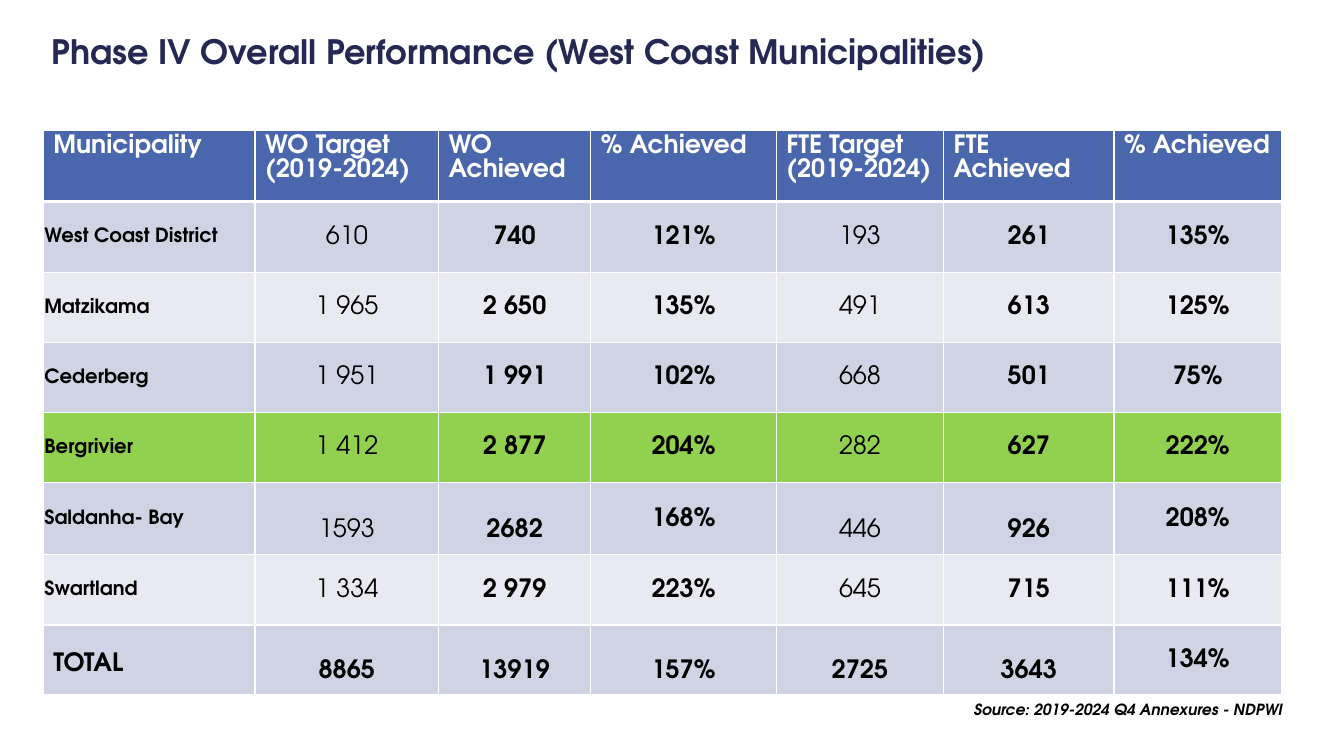
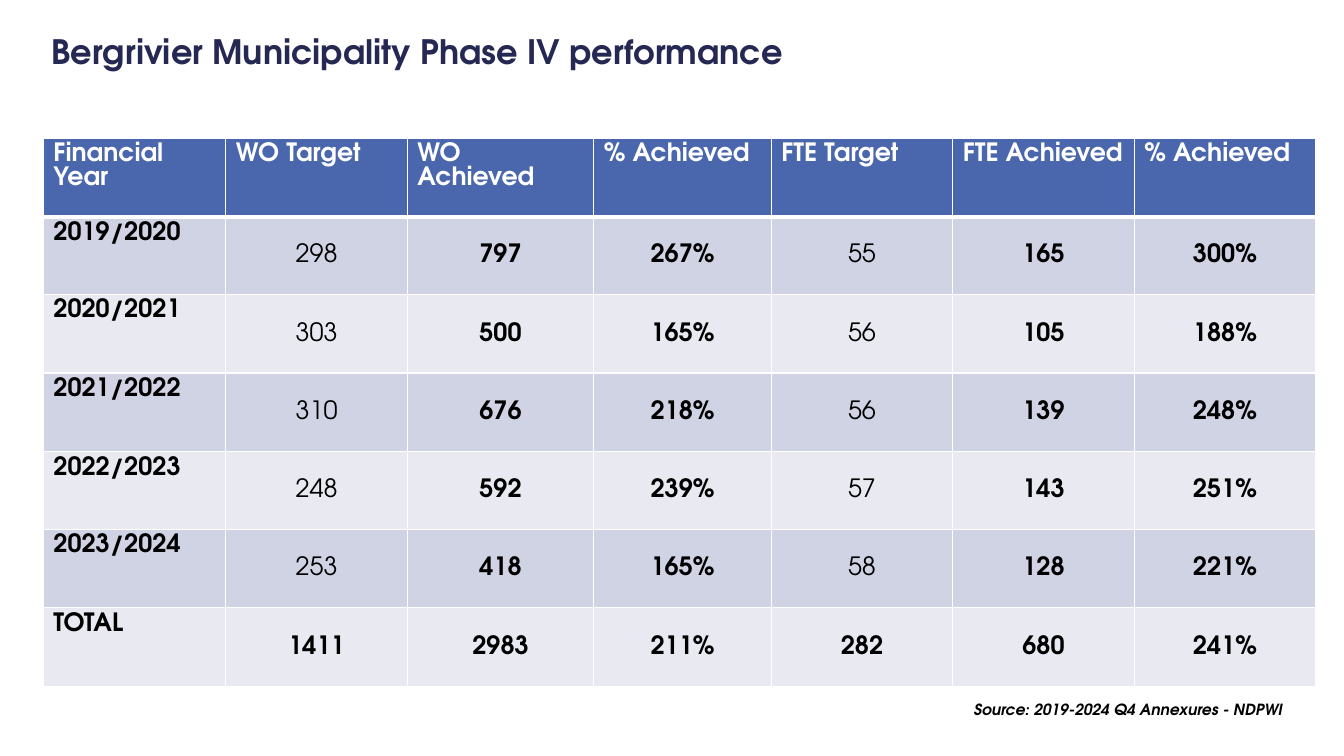
"""Build two municipal performance slides, each with a title, a table and a source line."""
from dataclasses import dataclass

from lxml import etree
from pptx import Presentation
from pptx.dml.color import RGBColor
from pptx.enum.text import MSO_ANCHOR, MSO_AUTO_SIZE, PP_ALIGN
from pptx.oxml.ns import qn
from pptx.util import Emu, Pt

LEFT, CENTER = PP_ALIGN.LEFT, PP_ALIGN.CENTER
TOP, MIDDLE = MSO_ANCHOR.TOP, MSO_ANCHOR.MIDDLE
NO_FIT = MSO_AUTO_SIZE.NONE

EMU_PER_PX = 9144
FONT = "TeX Gyre Adventor"
COLORS = {
    "title": "242852",
    "header": "4A66AC",
    "dark": "D0D3E3",
    "light": "E9EAF1",
    "highlight": "92D050",
    "white": "FFFFFF",
    "black": "000000",
}
TARGET_COLUMNS = (1, 4)
TABLE_LEFT = 43
SOURCE = "Source: 2019-2024 Q4 Annexures - NDPWI"
TIGHT = (1, 1, 1, 0)
NORMAL = (10, 5, 10, 5)
LOWERED = (10, 28, 10, 5)


@dataclass(frozen=True)
class Row:
    """A body row, its fill and the columns whose text sits lower."""

    texts: tuple[str, ...]
    fill: str
    lowered: tuple[int, ...] = ()


@dataclass(frozen=True)
class Performance:
    """The content and grid of one slide."""

    title: str
    top: int
    widths: tuple[int, ...]
    heights: tuple[int, ...]
    header: tuple[str, ...]
    rows: tuple[Row, ...]
    compact_labels: bool


@dataclass(frozen=True)
class CellStyle:
    """The look of one table cell."""

    fill: str
    color: str = "black"
    size: int = 18
    bold: bool = True
    align: int = LEFT
    anchor: int = TOP
    insets: tuple[int, ...] = NORMAL


SLIDES = (
    Performance(
        title="Phase IV Overall Performance (West Coast Municipalities)",
        top=129,
        widths=(210, 182, 151, 184, 166, 169, 166),
        heights=(71, 70, 70, 69, 70, 71, 70, 69),
        header=("Municipality", "WO Target\n(2019-2024)", "WO Achieved", "% Achieved",
                "FTE Target\n(2019-2024)", "FTE Achieved", "% Achieved"),
        rows=(
            Row(("West Coast District", "610", "740", "121%", "193", "261", "135%"), "dark"),
            Row(("Matzikama", "1 965", "2 650", "135%", "491", "613", "125%"), "light"),
            Row(("Cederberg", "1 951", "1 991", "102%", "668", "501", "75%"), "dark"),
            Row(("Bergrivier", "1 412", "2 877", "204%", "282", "627", "222%"), "highlight"),
            Row(("Saldanha- Bay", "1593", "2682", "168%", "446", "926", "208%"), "dark",
                (1, 2, 4, 5)),
            Row(("Swartland", "1 334", "2 979", "223%", "645", "715", "111%"), "light"),
            Row(("TOTAL", "8865", "13919", "157%", "2725", "3643", "134%"), "dark",
                (0, 1, 2, 3, 4, 5)),
        ),
        compact_labels=True,
    ),
    Performance(
        title="Bergrivier Municipality Phase IV performance",
        top=137,
        widths=(181, 180, 185, 176, 180, 180, 180),
        heights=(78, 77, 78, 78, 77, 78, 78),
        header=("Financial Year", "WO Target", "WO Achieved", "% Achieved",
                "FTE Target", "FTE Achieved", "% Achieved"),
        rows=(
            Row(("2019/2020", "298", "797", "267%", "55", "165", "300%"), "dark"),
            Row(("2020/2021", "303", "500", "165%", "56", "105", "188%"), "light"),
            Row(("2021/2022", "310", "676", "218%", "56", "139", "248%"), "dark"),
            Row(("2022/2023", "248", "592", "239%", "57", "143", "251%"), "light"),
            Row(("2023/2024", "253", "418", "165%", "58", "128", "221%"), "dark"),
            Row(("TOTAL", "1411", "2983", "211%", "282", "680", "241%"), "light"),
        ),
        compact_labels=False,
    ),
)


def px(value: int) -> Emu:
    """Turn pixels into EMU."""
    return Emu(value * EMU_PER_PX)


def rgb(name: str) -> RGBColor:
    """Look up a named colour."""
    return RGBColor.from_string(COLORS[name])


def set_font(p, size: int, color: str, bold: bool = True, italic: bool = False) -> None:
    """Format all the text of a paragraph."""
    p.font.name = FONT
    p.font.size = Pt(size)
    p.font.bold = bold
    p.font.italic = italic
    p.font.color.rgb = rgb(color)


def set_insets(box, insets: tuple[int, ...]) -> None:
    """Set left, top, right and bottom margins of a cell or text frame."""
    box.margin_left, box.margin_top, box.margin_right, box.margin_bottom = map(px, insets)


def set_borders(cell, bottom: int) -> None:
    """Give a cell white borders, with a bottom border of its own weight."""
    tc_pr = cell._tc.get_or_add_tcPr()
    for side, weight in (("L", 1), ("R", 1), ("T", 1), ("B", bottom)):
        ln = etree.SubElement(tc_pr, qn(f"a:ln{side}"), w=str(Pt(weight)))
        fill = etree.SubElement(ln, qn("a:solidFill"))
        etree.SubElement(fill, qn("a:srgbClr"), val=COLORS["white"])


def fill_cell(cell, text: str, style: CellStyle, bottom: int = 1) -> None:
    """Write and format one table cell."""
    set_borders(cell, bottom)
    cell.fill.solid()
    cell.fill.fore_color.rgb = rgb(style.fill)
    cell.vertical_anchor = style.anchor
    set_insets(cell, style.insets)
    cell.text_frame.text = text
    for p in cell.text_frame.paragraphs:
        p.alignment = style.align
        set_font(p, style.size, style.color, style.bold)


def body_style(row: Row, column: int, compact_labels: bool) -> CellStyle:
    """Choose the style of a body cell."""
    lowered = column in row.lowered
    if column == 0:
        if compact_labels and not lowered:
            return CellStyle(row.fill, size=14, anchor=MIDDLE, insets=TIGHT)
        return CellStyle(row.fill, insets=LOWERED if lowered else NORMAL)
    bold = column not in TARGET_COLUMNS or row.texts[0] == "TOTAL"
    return CellStyle(row.fill, bold=bold, align=CENTER, anchor=MIDDLE,
                     insets=LOWERED if lowered else TIGHT)


def add_title(slide, text: str) -> None:
    """Place and format the title placeholder."""
    sp = slide.shapes.title
    sp.left, sp.top, sp.width, sp.height = map(px, (43, 20, 1254, 61))
    tf = sp.text_frame
    tf.text = text
    tf.word_wrap = False
    tf.auto_size = NO_FIT
    tf.vertical_anchor = MIDDLE
    set_insets(tf, (8, 8, 8, 8))
    p = tf.paragraphs[0]
    p.alignment = LEFT
    set_font(p, 24, "title")


def add_performance_table(slide, spec: Performance) -> None:
    """Draw the header and body rows of a performance table."""
    frame = slide.shapes.add_table(
        len(spec.heights), len(spec.widths), px(TABLE_LEFT), px(spec.top),
        px(sum(spec.widths)), px(sum(spec.heights)))
    table = frame.table
    table.horz_banding = False
    for column, width in zip(table.columns, spec.widths):
        column.width = px(width)
    for row, height in zip(table.rows, spec.heights):
        row.height = px(height)
    for c, text in enumerate(spec.header):
        fill_cell(table.cell(0, c), text, CellStyle("header", color="white"), bottom=3)
    for r, row in enumerate(spec.rows, start=1):
        for c, text in enumerate(row.texts):
            fill_cell(table.cell(r, c), text, body_style(row, c, spec.compact_labels))


def add_source(slide) -> None:
    """Add the source line below the table."""
    sp = slide.shapes.add_textbox(*map(px, (956, 690, 377, 29)))
    tf = sp.text_frame
    tf.word_wrap = True
    tf.text = SOURCE
    set_font(tf.paragraphs[0], 11, "black", italic=True)


def main() -> None:
    """Build and save the presentation."""
    prs = Presentation()
    prs.slide_width, prs.slide_height = px(1333), px(750)
    layout = prs.slide_layouts.get_by_name("Title Only")
    for spec in SLIDES:
        slide = prs.slides.add_slide(layout)
        add_title(slide, spec.title)
        add_performance_table(slide, spec)
        add_source(slide)
    prs.save("out.pptx")


if __name__ == "__main__":
    main()
